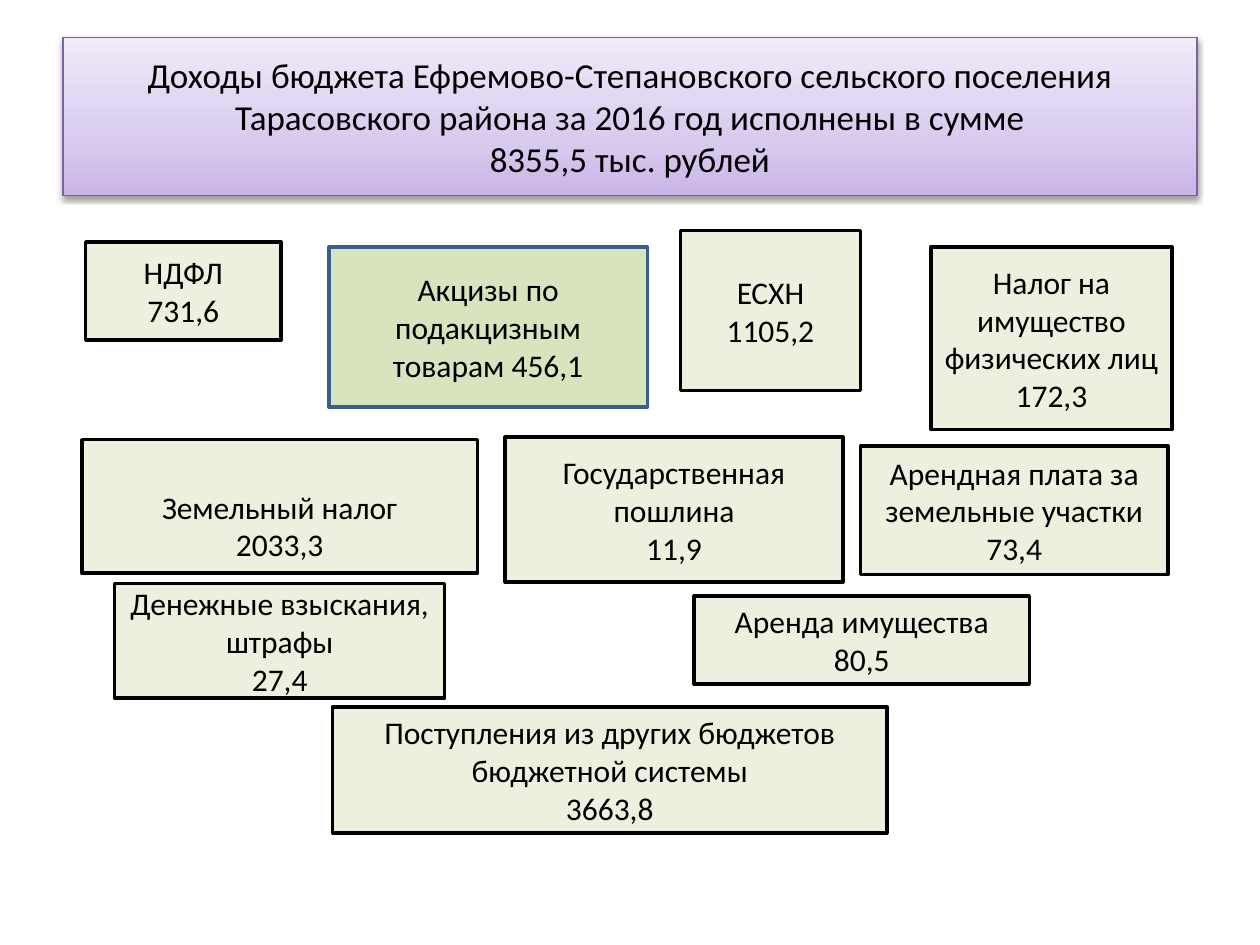
import copy

import lxml.etree
import pptx
import pptx.dml.color
import pptx.enum.shapes
import pptx.enum.text
import pptx.oxml
import pptx.oxml.ns
import pptx.util

Inches, Pt = pptx.util.Inches, pptx.util.Pt
RGB = pptx.dml.color.RGBColor
SHAPE = pptx.enum.shapes.MSO_SHAPE

BLACK = RGB(0x00, 0x00, 0x00)
PALE_GREEN = RGB(0xEB, 0xF1, 0xDE)
GREEN = RGB(0xD7, 0xE4, 0xBD)
BLUE = RGB(0x3A, 0x5F, 0x8C)
PURPLE = RGB(0x7D, 0x60, 0xA0)
TITLE_STOPS = [
    (0, RGB(0xC9, 0xB5, 0xE8)),
    (0.35, RGB(0xD8, 0xCB, 0xEE)),
    (1, RGB(0xF0, 0xEA, 0xF9)),
]

TITLE = ("Доходы бюджета Ефремово-Степановского сельского поселения "
         "Тарасовского района за 2016 год исполнены в сумме\v"
         "8355,5 тыс. рублей")

# paragraphs, (left, top, width, height), format that differs from the usual box
INCOMES = [
    (["НДФЛ", "731,6"], (0.68, 1.92, 1.55, 0.78), {}),
    (["ЕСХН", "1105,2"], (5.4, 1.83, 1.43, 1.27), {}),
    (["Налог на имущество физических лиц", "172,3"], (7.39, 1.96, 1.91, 1.45), {}),
    (["Земельный налог", "2033,3"], (0.65, 3.49, 3.14, 1.06), {"top_inset": 0.35}),
    (["Государственная пошлина", "11,9"], (4.01, 3.47, 2.68, 1.15), {}),
    (["Арендная плата за земельные участки", "73,4"], (6.83, 3.54, 2.44, 1.02), {}),
    (["Денежные взыскания, штрафы", "27,4"], (0.91, 4.63, 2.62, 0.91), {}),
    (["Поступления из других бюджетов бюджетной системы", "3663,8"],
     (2.64, 5.61, 4.4, 1), {}),
    (["Аренда имущества", "80,5"], (5.51, 4.73, 2.66, 0.7), {}),
    (["Акцизы по подакцизным товарам 456,1"], (2.61, 1.96, 2.53, 1.27),
     {"kind": SHAPE.FLOWCHART_PROCESS, "fill": GREEN, "line": BLUE}),
]


def write_text(sp, paragraphs, size=18, color=BLACK, font="Calibri", top_inset=0.05):
    tf = sp.text_frame
    tf.word_wrap = True
    tf.auto_size = pptx.enum.text.MSO_AUTO_SIZE.NONE
    tf.vertical_anchor = pptx.enum.text.MSO_ANCHOR.MIDDLE
    tf.margin_top = Inches(top_inset)
    for i, text in enumerate(paragraphs):
        p = tf.add_paragraph() if i else tf.paragraphs[0]
        p.text = text
        p.alignment = pptx.enum.text.PP_ALIGN.CENTER
        for r in p.runs:
            r.font.size = Pt(size)
            r.font.name = font
            r.font.color.rgb = color


def add_box(s, paragraphs, at, kind=SHAPE.RECTANGLE, fill=PALE_GREEN, line=BLACK, **text_format):
    sp = s.shapes.add_shape(kind, *map(Inches, at))
    sp.shadow.inherit = False
    sp.fill.solid()
    sp.fill.fore_color.rgb = fill
    sp.line.color.rgb = line
    sp.line.width = Pt(2)
    write_text(sp, paragraphs, **text_format)


def set_gradient(sp, stops, angle):
    sp.fill.gradient()
    sp.fill.gradient_angle = angle
    stop_list = sp._element.spPr.find(".//" + pptx.oxml.ns.qn("a:gsLst"))
    while len(stop_list) < len(stops):
        stop_list.append(copy.deepcopy(stop_list[0]))
    for stop, (position, color) in zip(sp.fill.gradient_stops, stops):
        stop.position = position
        stop.color.rgb = color


def set_shadow(sp, blur, distance, alpha):
    """Drop a black shadow straight down; blur and distance in points, alpha in percent."""
    sp.shadow.inherit = False
    effects = sp._element.spPr.find(pptx.oxml.ns.qn("a:effectLst"))
    effects.append(pptx.oxml.parse_xml(
        f'<a:outerShdw {pptx.oxml.ns.nsdecls("a")} blurRad="{int(Pt(blur))}" '
        f'dist="{int(Pt(distance))}" dir="5400000" rotWithShape="0">'
        f'<a:srgbClr val="000000"><a:alpha val="{alpha * 1000}"/></a:srgbClr>'
        '</a:outerShdw>'))


def add_title(s):
    sp = s.shapes.title
    sp.left, sp.top, sp.width, sp.height = map(Inches, (0.5, 0.3, 9, 1.25))
    set_gradient(sp, TITLE_STOPS, angle=90)
    sp.line.color.rgb = PURPLE
    sp.line.width = Pt(0.75)
    set_shadow(sp, blur=3.1, distance=1.6, alpha=38)
    write_text(sp, [TITLE], size=20)


def main():
    prs = pptx.Presentation()
    prs.slide_width, prs.slide_height = Inches(10), Inches(7.5)
    s = prs.slides.add_slide(prs.slide_layouts.get_by_name("Title Only"))
    add_title(s)
    for paragraphs, at, box_format in INCOMES:
        add_box(s, paragraphs, at, **box_format)
    prs.save("out.pptx")


if __name__ == "__main__":
    main()
